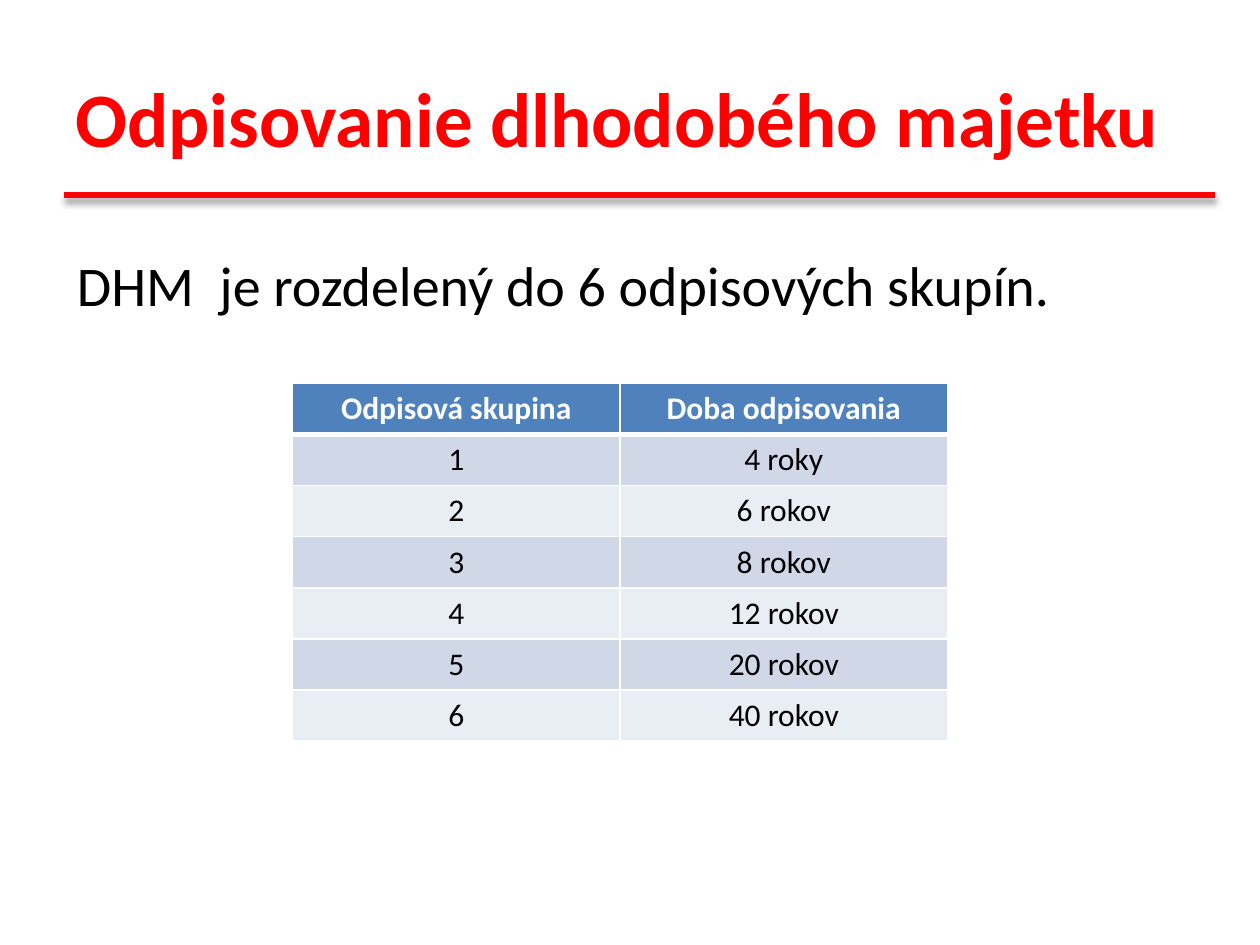
from lxml.etree import SubElement
from pptx import Presentation
from pptx.dml.color import RGBColor
from pptx.enum.shapes import MSO_CONNECTOR as Connector
from pptx.enum.text import MSO_ANCHOR as Anchor, PP_ALIGN as Align
from pptx.oxml import parse_xml
from pptx.oxml.ns import nsdecls, qn
from pptx.util import Cm, Pt

RED, BLACK, WHITE = "FF0000", "000000", "FFFFFF"
HEADER_FILL, BAND_FILLS = "4F81BD", ("D0D8E8", "E9EDF4")
GROUPS = [
    ("Odpisová skupina", "Doba odpisovania"),
    ("1", "4 roky"),
    ("2", "6 rokov"),
    ("3", "8 rokov"),
    ("4", "12 rokov"),
    ("5", "20 rokov"),
    ("6", "40 rokov"),
]


def colour(value):
    return RGBColor.from_string(value)


class SlideBuilder:
    """Holds the style and the current slide, and draws each kind of element."""

    def __init__(self, page, font="Calibri"):
        self.page = page
        self.font = font

    def style(self, frame, size, ink, bold=False, align=Align.LEFT):
        for para in frame.paragraphs:
            para.alignment = align
            for span in para.runs:
                span.font.name = self.font
                span.font.size = Pt(size)
                span.font.bold = bold
                span.font.color.rgb = colour(ink)

    def text(self, words, left, top, width, height, size, ink, bold=False, anchor=Anchor.TOP):
        box = self.page.shapes.add_textbox(Cm(left), Cm(top), Cm(width), Cm(height))
        frame = box.text_frame
        frame.word_wrap = True
        frame.vertical_anchor = anchor
        frame.text = words
        self.style(frame, size, ink, bold)

    def rule(self, left, right, top, weight, ink):
        line = self.page.shapes.add_connector(
            Connector.STRAIGHT, Cm(left), Cm(top), Cm(right), Cm(top))
        line.line.color.rgb = colour(ink)
        line.line.width = Pt(weight)
        line._element.spPr.append(parse_xml(
            f'<a:effectLst {nsdecls("a")}>'
            f'<a:outerShdw blurRad="{Pt(4)}" dist="{Pt(3)}" dir="5400000" rotWithShape="0">'
            f'<a:srgbClr val="{BLACK}"><a:alpha val="40000"/></a:srgbClr>'
            '</a:outerShdw></a:effectLst>'))

    def borders(self, cell, top, bottom):
        properties = cell._tc.get_or_add_tcPr()
        sides = (("lnL", 1), ("lnR", 1), ("lnT", top), ("lnB", bottom))
        for position, (side, weight) in enumerate(sides):
            edge = SubElement(properties, qn(f"a:{side}"), w=str(Pt(weight)))
            fill = SubElement(edge, qn("a:solidFill"))
            SubElement(fill, qn("a:srgbClr"), val=WHITE)
            properties.insert(position, edge)

    def table(self, rows, left, top, column_width, row_height, size):
        columns = len(rows[0])
        table = self.page.shapes.add_table(
            len(rows), columns, Cm(left), Cm(top),
            Cm(column_width * columns), Cm(row_height * len(rows))).table
        for number, row in enumerate(rows):
            header = number == 0
            for column, words in enumerate(row):
                cell = table.cell(number, column)
                cell.text_frame.text = words
                self.style(cell.text_frame, size, WHITE if header else BLACK, header, Align.CENTER)
                cell.fill.solid()
                cell.fill.fore_color.rgb = colour(
                    HEADER_FILL if header else BAND_FILLS[(number - 1) % 2])
                self.borders(cell, 3 if number == 1 else 1, 3 if header else 1)


def main():
    deck = Presentation()
    deck.slide_width, deck.slide_height = Cm(25.4), Cm(19.05)
    slide = SlideBuilder(deck.slides.add_slide(deck.slide_layouts[6]))
    slide.rule(1.3, 24.5, 3.93, 3, RED)
    slide.text("Odpisovanie dlhodobého majetku", 1.27, 0.76, 22.86, 3.18, 44, RED,
               bold=True, anchor=Anchor.MIDDLE)
    slide.table(GROUPS, 5.9, 7.73, 6.6, 1.03, 18)
    slide.text("DHM  je rozdelený do 6 odpisových skupín.", 1.3, 4.93, 23.2, 1.62, 32, BLACK)
    deck.save("out.pptx")


if __name__ == "__main__":
    main()
